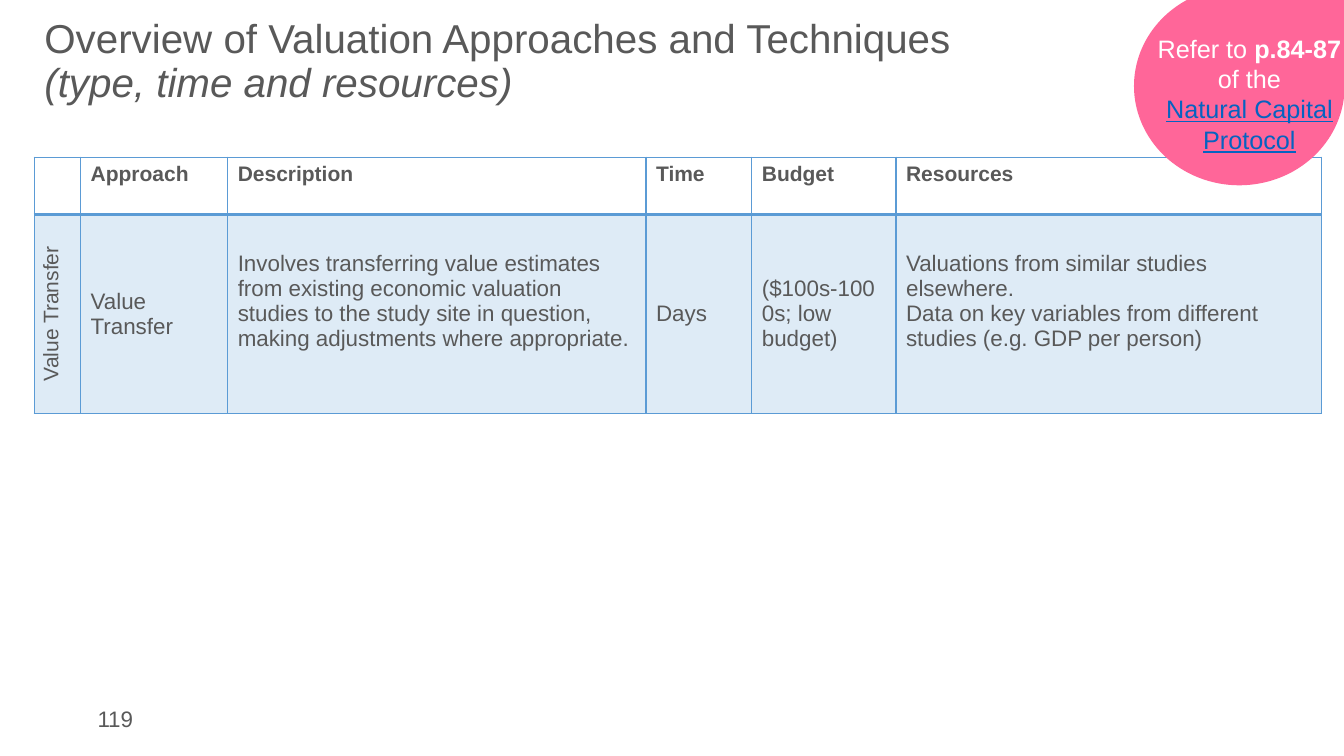
from dataclasses import dataclass

from lxml.etree import SubElement
from pptx import Presentation
from pptx.dml.color import RGBColor as Color
from pptx.enum.shapes import MSO_SHAPE as Shape
from pptx.enum.text import MSO_ANCHOR as Anchor, MSO_AUTO_SIZE as AutoSize, PP_ALIGN as Align
from pptx.oxml.ns import qn
from pptx.util import Pt


@dataclass(frozen=True)
class Theme:
    """Colours, type sizes and font of the slide."""
    font: str = "Arial"
    text: str = "595959"
    white: str = "FFFFFF"
    link: str = "0563C1"
    pink: str = "FF6699"
    blue: str = "5B9BD5"
    tint: int = 20
    title: float = 28.8
    callout: float = 18
    body: float = 16
    header: float = 15


class Page:
    """One slide with its style and a method for each kind of element."""

    def __init__(self, deck, theme):
        """Add a title-only slide to the deck."""
        self.theme = theme
        self.slide = deck.slides.add_slide(deck.slide_layouts[5])

    def fill_text(self, frame, lines, size, align=Align.LEFT, spacing=None):
        """Fill a frame with paragraphs, each a list of (text, format) spans."""
        for index, line in enumerate(lines):
            para = frame.paragraphs[0] if index == 0 else frame.add_paragraph()
            para.alignment = align
            if spacing:
                para.line_spacing = spacing
            for text, style in line:
                if text == "\n":
                    para.add_line_break()
                    continue
                span = para.add_run()
                span.text = text
                look = {"name": self.theme.font, "size": Pt(size), "color": self.theme.text, **style}
                span.font.color.rgb = Color.from_string(look.pop("color"))
                for name, value in look.items():
                    setattr(span.font, name, value)

    def place(self, shape, left, top, width, height):
        """Move and size a shape."""
        for name, value in zip(("left", "top", "width", "height"), (left, top, width, height)):
            setattr(shape, name, Pt(value))

    def title(self, area, lines):
        """Move the title placeholder and set its lines."""
        box = self.slide.shapes.title
        self.place(box, *area)
        frame = box.text_frame
        for name, value in {"word_wrap": True, "auto_size": AutoSize.NONE,
                            "vertical_anchor": Anchor.MIDDLE}.items():
            setattr(frame, name, value)
        self.fill_text(frame, lines, self.theme.title, spacing=0.9)

    def text(self, area, lines, size, align=Align.LEFT):
        """Add a wrapping text box."""
        box = self.slide.shapes.add_textbox(*map(Pt, area))
        box.text_frame.word_wrap = True
        self.fill_text(box.text_frame, lines, size, align)

    def shape(self, kind, area, color):
        """Add a plain filled shape without an outline."""
        shape = self.slide.shapes.add_shape(kind, *map(Pt, area))
        shape.shadow.inherit = False
        shape.fill.solid()
        shape.fill.fore_color.rgb = Color.from_string(color)
        shape.line.fill.background()

    def borders(self, cell, bottom):
        """Draw the four cell borders, with a given bottom width."""
        properties = cell._tc.get_or_add_tcPr()
        for side, width in {"L": 1, "R": 1, "T": 1, "B": bottom}.items():
            line = SubElement(properties, qn(f"a:ln{side}"), w=str(Pt(width)))
            fill = SubElement(line, qn("a:solidFill"))
            SubElement(fill, qn("a:srgbClr"), val=self.theme.blue)

    def tint(self, cell):
        """Fill a cell with the transparent tint."""
        cell.fill.solid()
        cell.fill.fore_color.rgb = Color.from_string(self.theme.blue)
        color = cell._tc.tcPr.find(f"{qn('a:solidFill')}/{qn('a:srgbClr')}")
        SubElement(color, qn("a:alpha"), val=str(self.theme.tint * 1000))

    def table(self, area, widths, heights, headings, label, entries):
        """Add a table with a heading row and a tinted row led by a turned label."""
        table = self.slide.shapes.add_table(len(heights), len(widths), *map(Pt, area)).table
        for column, width in zip(table.columns, widths):
            column.width = Pt(width)
        for row, height in zip(table.rows, heights):
            row.height = Pt(height)
        for column, heading in enumerate(headings):
            cell = table.cell(0, column)
            self.borders(cell, 2)
            cell.fill.background()
            if heading:
                self.fill_text(cell.text_frame, [[(heading, {"bold": True})]], self.theme.header)
        side = table.cell(1, 0)
        side._tc.get_or_add_tcPr().set("vert", "vert270")
        self.fill_text(side.text_frame, [[(label, {"bold": False})]], self.theme.header, Align.CENTER)
        for column, (lines, lift) in enumerate(entries, 1):
            cell = table.cell(1, column)
            cell.vertical_anchor = Anchor.MIDDLE
            cell.margin_bottom = Pt(3.6 + lift)
            self.fill_text(cell.text_frame, [[(line, {"bold": False})] for line in lines], self.theme.body)
        for column in range(len(widths)):
            self.borders(table.cell(1, column), 1)
            self.tint(table.cell(1, column))


def main():
    """Build the valuation overview slide."""
    theme = Theme()
    deck = Presentation()
    deck.slide_width, deck.slide_height = Pt(960), Pt(540)
    page = Page(deck, theme)
    page.title((24.5, 10, 764, 69), [[
        ("Overview of Valuation Approaches and Techniques", {}), ("\n", {}),
        ("(type, time and resources)", {"italic": True})]])
    lift = 17.7
    page.table(
        (24.5, 112.3, 919.4, 182.8), (33.1, 105.1, 298.8, 75.6, 103, 303.8), (41, 141.8),
        ("", "Approach", "Description", "Time", "Budget", "Resources"), "Value Transfer",
        ((("Value", "Transfer"), 0),
         (("Involves transferring value estimates from existing economic valuation studies "
           "to the study site in question, making adjustments where appropriate.",), lift),
         (("Days",), 0),
         (("($100s-1000s; low budget)",), 0),
         (("Valuations from similar studies elsewhere.",
           "Data on key variables from different studies (e.g. GDP per person)"), lift)))
    page.shape(Shape.TEAR, (810, -9.4, 150.5, 141.8), theme.pink)
    page.text((62.6, 500.4, 216, 28.8), [[("119", {})]], theme.body)
    white = {"color": theme.white}
    page.text((817.2, 20.2, 150.5, 94.3), [
        [("Refer to ", white), ("p.84-87", {**white, "bold": True})],
        [("of the", white)],
        [("Natural Capital Protocol", {"color": theme.link, "underline": True})],
    ], theme.callout, Align.CENTER)
    deck.save("out.pptx")


if __name__ == "__main__":
    main()
